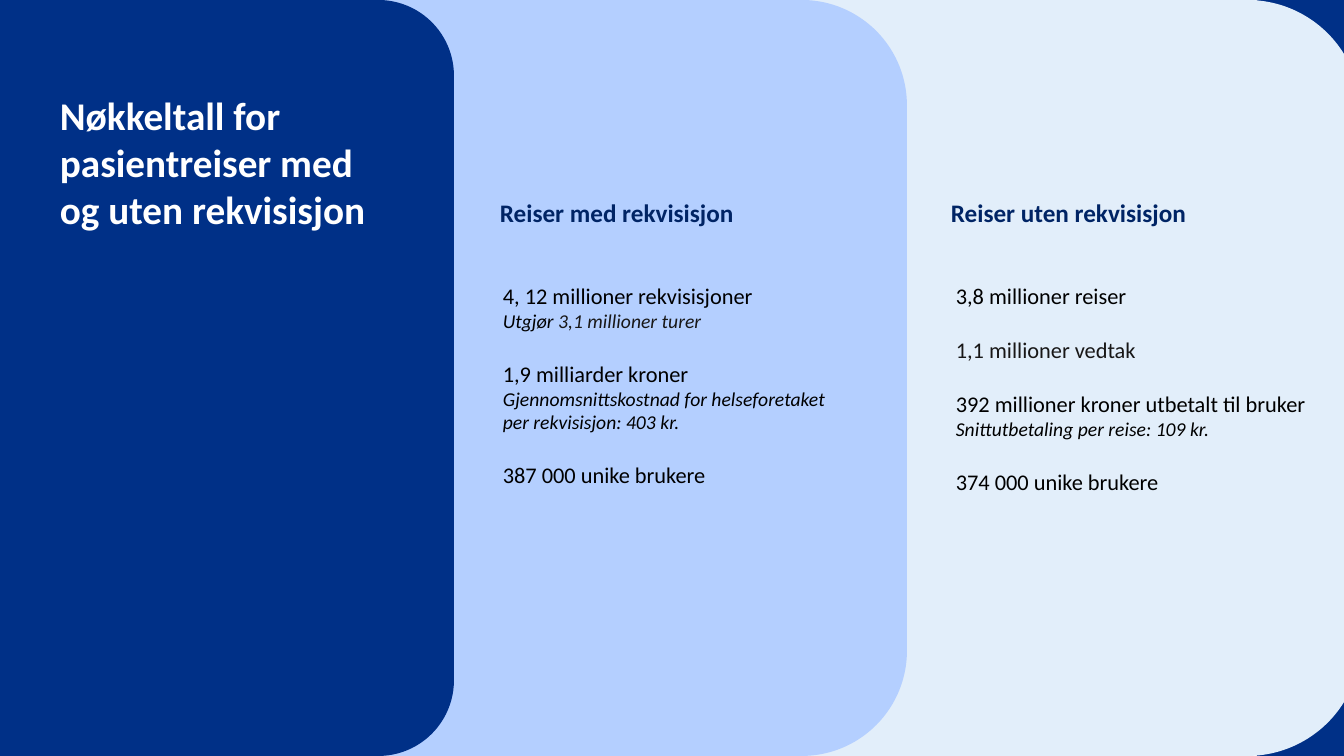
from pptx import Presentation
from pptx.dml.color import RGBColor
from pptx.enum.shapes import MSO_SHAPE
from pptx.enum.text import MSO_AUTO_SIZE
from pptx.util import Emu, Pt

SCALE = 914400 / 100.8
NAVY, BLUE, PALE = "003087", "B4CFFF", "E2EEFA"
HEADING, BLACK, CHARCOAL, WHITE = "002465", "000000", "181717", "FFFFFF"


def color(value):
    return RGBColor.from_string(value)


def add_text(text, left, top, width, height, size=16, ink=BLACK, bold=False, grow=False):
    box = page.shapes.add_textbox(*[Emu(round(px * SCALE)) for px in (left, top, width, height)])
    frame = box.text_frame
    frame.word_wrap = True
    frame.auto_size = MSO_AUTO_SIZE.SHAPE_TO_FIT_TEXT if grow else MSO_AUTO_SIZE.NONE
    groups = [[text]] if isinstance(text, str) else text
    for group_index, group in enumerate(groups):
        for line_index, line in enumerate(group):
            first = group_index == 0 and line_index == 0
            para = frame.paragraphs[0] if first else frame.add_paragraph()
            if group_index and line_index == 0:
                para.space_before = Pt(19.5)
            parts = [(line, ink)] if isinstance(line, str) else line
            for words, part_ink in parts:
                span = para.add_run()
                span.text = words
                font = span.font
                font.name = "Calibri"
                font.size = Pt(14 if line_index else size)
                font.bold = bold
                font.italic = line_index > 0
                font.color.rgb = color(part_ink)


deck = Presentation()
deck.slide_width = Emu(round(1344 * SCALE))
deck.slide_height = Emu(round(756 * SCALE))
page = deck.slides.add_slide(deck.slide_layouts[6])

panels = [
    (MSO_SHAPE.RECTANGLE, 1257, 87, NAVY),
    (MSO_SHAPE.RECTANGLE, 0, 95, NAVY),
    (MSO_SHAPE.ROUNDED_RECTANGLE, 679, 682, PALE),
    (MSO_SHAPE.ROUNDED_RECTANGLE, 276, 631, BLUE),
    (MSO_SHAPE.ROUNDED_RECTANGLE, 0, 454, NAVY),
]
for kind, left, width, fill in panels:
    panel = page.shapes.add_shape(kind, Emu(round(left * SCALE)), 0, Emu(round(width * SCALE)), deck.slide_height)
    panel.shadow.inherit = False
    panel.fill.solid()
    panel.fill.fore_color.rgb = color(fill)
    panel.line.fill.background()

add_text("Nøkkeltall for pasientreiser med og uten rekvisisjon", 50, 86, 353, 152,
         size=28, ink=WHITE, bold=True, grow=True)

with_requisition = [
    ["4, 12 millioner rekvisisjoner", [("Utgjør ", BLACK), ("3,1 millioner turer", CHARCOAL)]],
    ["1,9 milliarder kroner", "Gjennomsnittskostnad for helseforetaket per rekvisisjon: 403 kr."],
    ["387 000 unike brukere"],
]
without_requisition = [
    ["3,8 millioner reiser"],
    [[("1,1 millioner vedtak", CHARCOAL)]],
    ["392 millioner kroner utbetalt til bruker", "Snittutbetaling per reise: 109 kr."],
    ["374 000 unike brukere"],
]
columns = [
    ("Reiser med rekvisisjon", 490, with_requisition, 493, 359),
    ("Reiser uten rekvisisjon", 941, without_requisition, 946, 392),
]
for heading, heading_left, figures, figures_left, figures_width in columns:
    add_text(heading, heading_left, 192, 314, 45, size=18, ink=HEADING, bold=True)
    add_text(figures, figures_left, 277, figures_width, 241)

deck.save("out.pptx")
